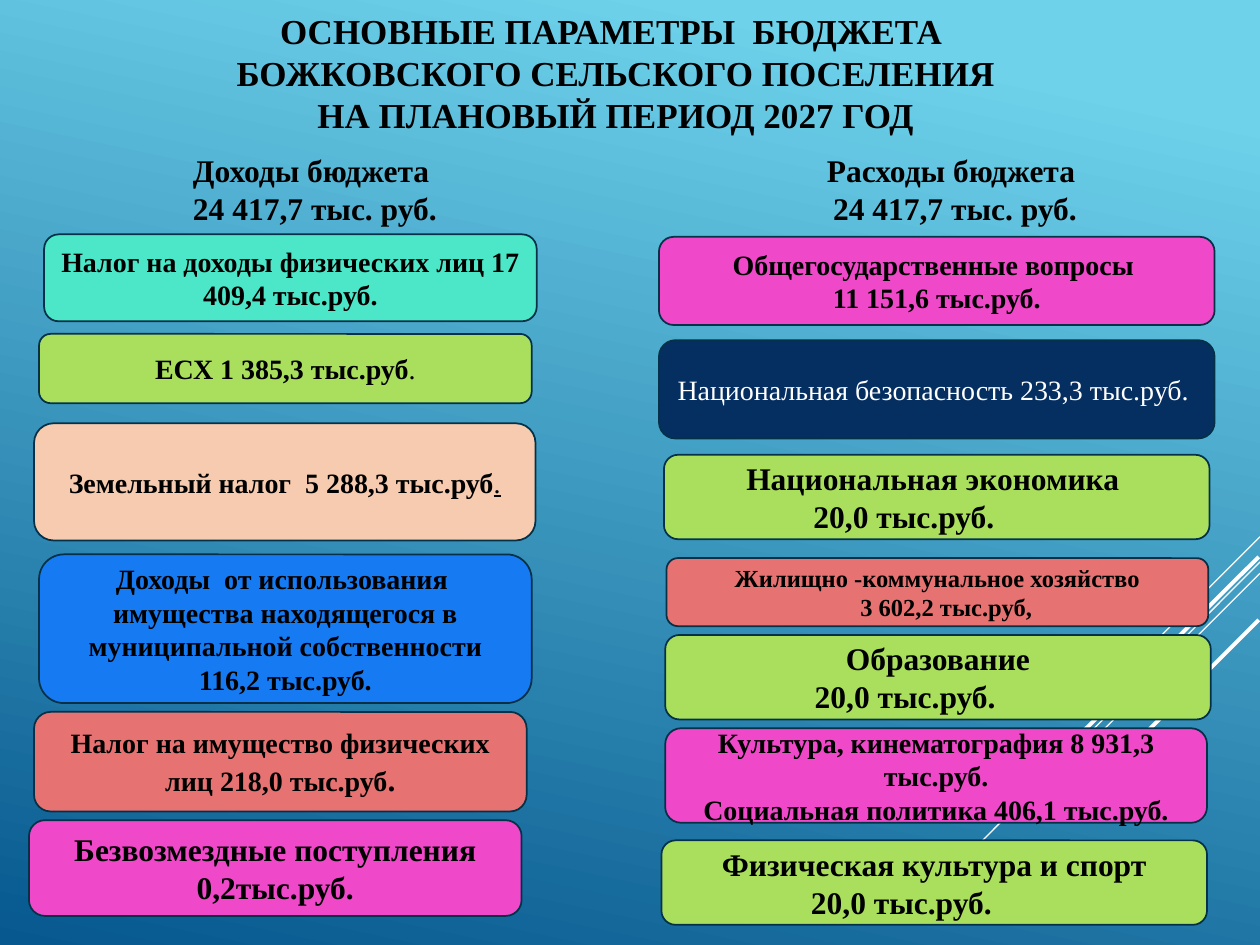
"""Build the budget overview slide for the 2027 planning period."""
from lxml import etree
from pptx import Presentation
from pptx.dml.color import RGBColor
from pptx.enum import shapes as sh, text as tx
from pptx.oxml import ns
from pptx.util import Inches, Pt

FONT = "Times New Roman"
HEX = {
    "sky": "6ED2EB", "deep": "06588E", "edge": "043148",
    "black": "000000", "white": "FFFFFF", "navy": "052F61",
    "mint": "4BE7C8", "lime": "AADF5E", "peach": "F6CBAF",
    "blue": "167BF3", "coral": "E67272", "pink": "EF48C9",
}
TITLE = ("ОСНОВНЫЕ ПАРАМЕТРЫ  БЮДЖЕТА \v БОЖКОВСКОГО СЕЛЬСКОГО ПОСЕЛЕНИЯ \v"
         "НА ПЛАНОВЫЙ ПЕРИОД 2027 ГОД")
HEADS = [
    (0.31, 4.38, "Доходы бюджета \n 24 417,7 тыс. руб. "),
    (5.55, 4.06, "Расходы бюджета \n24 417,7 тыс. руб."),
]
RAYS = [
    (10, 4.26, 9.17, 5.09, 0.75),
    (10, 4.46, 7.3, 7.17, 0.75),
    (10, 4.55, 8.28, 6.27, 0.75),
    (9.99, 4.42, 8.41, 5.99, 2.25),
    (9.99, 4.92, 8.85, 6.06, 2.25),
]
INCOME = [
    (0.35, 1.86, 3.91, 0.69, "mint", "Налог на доходы физических лиц 17 409,4 тыс.руб.", {}),
    (0.31, 2.65, 3.91, 0.55, "lime", "ЕСХ 1 385,3 тыс.руб", {"dot": {"bold": False}}),
    (0.27, 3.36, 3.98, 0.93, "peach", "Земельный налог  5 288,3 тыс.руб",
     {"dot": {"bold": False, "under": True}}),
    (0.31, 4.4, 3.91, 1.18, "blue",
     "Доходы  от использования  имущества находящегося в "
     "муниципальной собственности 116,2 тыс.руб.", {}),
    (0.27, 5.65, 3.91, 0.79, "coral", "Налог на имущество физических лиц 218,0 тыс.руб",
     {"dot": {"size": 18}}),
    (0.23, 6.51, 3.91, 0.76, "pink", "Безвозмездные поступления\n0,2тыс.руб.", {"size": 18}),
]
SMALL = {"size": 18, "right": 0.52}
COSTS = [
    (5.23, 1.88, 4.41, 0.7, "pink", "Общегосударственные вопросы \n11 151,6 тыс.руб.", {}),
    (5.23, 2.7, 4.41, 0.78, "navy", "Национальная безопасность 233,3 тыс.руб. ",
     {"bold": False, "color": "white"}),
    (5.27, 3.61, 4.33, 0.67, "lime", "Национальная экономика \n20,0 тыс.руб.", SMALL),
    (5.29, 4.43, 4.3, 0.54, "coral", "Жилищно -коммунальное хозяйство\n3 602,2 тыс.руб,",
     {"size": 14, "left": 0.14}),
    (5.28, 5.04, 4.33, 0.67, "lime", "Образование\n20,0 тыс.руб.", SMALL),
    (5.28, 5.78, 4.3, 0.75, "pink",
     "Культура, кинематография 8 931,3 тыс.руб.\nСоциальная политика 406,1 тыс.руб.", {}),
    (5.25, 6.67, 4.33, 0.67, "lime", "Физическая культура и спорт\n20,0 тыс.руб.", SMALL),
]


def tint(name):
    """Return the named colour."""
    return RGBColor.from_string(HEX[name])


def style(font, size=16, bold=True, color="black", under=None):
    """Format one font."""
    font.name, font.size = FONT, Pt(size)
    font.bold, font.underline = bold, under
    font.color.rgb = tint(color)


def write(frame, words, dot=None, left=0, right=0, **form):
    """Fill a frame with centred lines, the last one indented or ended by its own dot."""
    frame.word_wrap = True
    for num, line in enumerate(words.split("\n")):
        para = frame.add_paragraph() if num else frame.paragraphs[0]
        para.text = line
        para.alignment = tx.PP_ALIGN.CENTER
        for run in para.runs:
            style(run.font, **form)
    props = para._p.get_or_add_pPr()
    for key, gap in (("marL", left), ("marR", right)):
        if gap:
            props.set(key, str(Inches(gap)))
    if dot:
        run = para.add_run()
        run.text = "."
        style(run.font, **{**form, **dot})


def paint(slide):
    """Set the gradient background."""
    fill = slide.background.fill
    fill.gradient()
    fill.gradient_angle = 258
    for stop, name, spot in zip(fill.gradient_stops, ("sky", "deep"), (0.1, 1)):
        stop.color.rgb, stop.position = tint(name), spot


def ray(slide, x1, y1, x2, y2, width):
    """Draw one white diagonal line."""
    line = slide.shapes.add_connector(
        sh.MSO_CONNECTOR.STRAIGHT, *map(Inches, (x1, y1, x2, y2)))
    line.line.color.rgb, line.line.width = tint("white"), Pt(width)
    etree.SubElement(line._element.spPr, ns.qn("a:effectLst"))


def head(slide, left, width, words):
    """Add a column heading."""
    box = slide.shapes.add_textbox(*map(Inches, (left, 1.15, width, 0.71)))
    write(box.text_frame, words, size=18)


def card(slide, left, top, width, height, fill, words, form):
    """Add a rounded budget item."""
    box = slide.shapes.add_shape(
        sh.MSO_SHAPE.ROUNDED_RECTANGLE, *map(Inches, (left, top, width, height)))
    box.shadow.inherit = False
    box.fill.solid()
    box.fill.fore_color.rgb = tint(fill)
    box.line.color.rgb, box.line.width = tint("edge"), Pt(1)
    box.text_frame.vertical_anchor = tx.MSO_ANCHOR.MIDDLE
    write(box.text_frame, words, **form)


def title(slide):
    """Place and fill the title."""
    box = slide.shapes.title
    box.left, box.top, box.width, box.height = map(Inches, (0.47, 0.13, 8.83, 0.89))
    box.text_frame.auto_size = tx.MSO_AUTO_SIZE.NONE
    box.text_frame.vertical_anchor = tx.MSO_ANCHOR.MIDDLE
    write(box.text_frame, TITLE, size=20)


def main():
    """Build and save the slide."""
    deck = Presentation()
    deck.slide_width, deck.slide_height = Inches(10), Inches(7.5)
    slide = deck.slides.add_slide(deck.slide_layouts[5])
    paint(slide)
    title(slide)
    for item in RAYS:
        ray(slide, *item)
    for item in HEADS:
        head(slide, *item)
    for item in INCOME + COSTS:
        card(slide, *item)
    deck.save("out.pptx")


if __name__ == "__main__":
    main()
